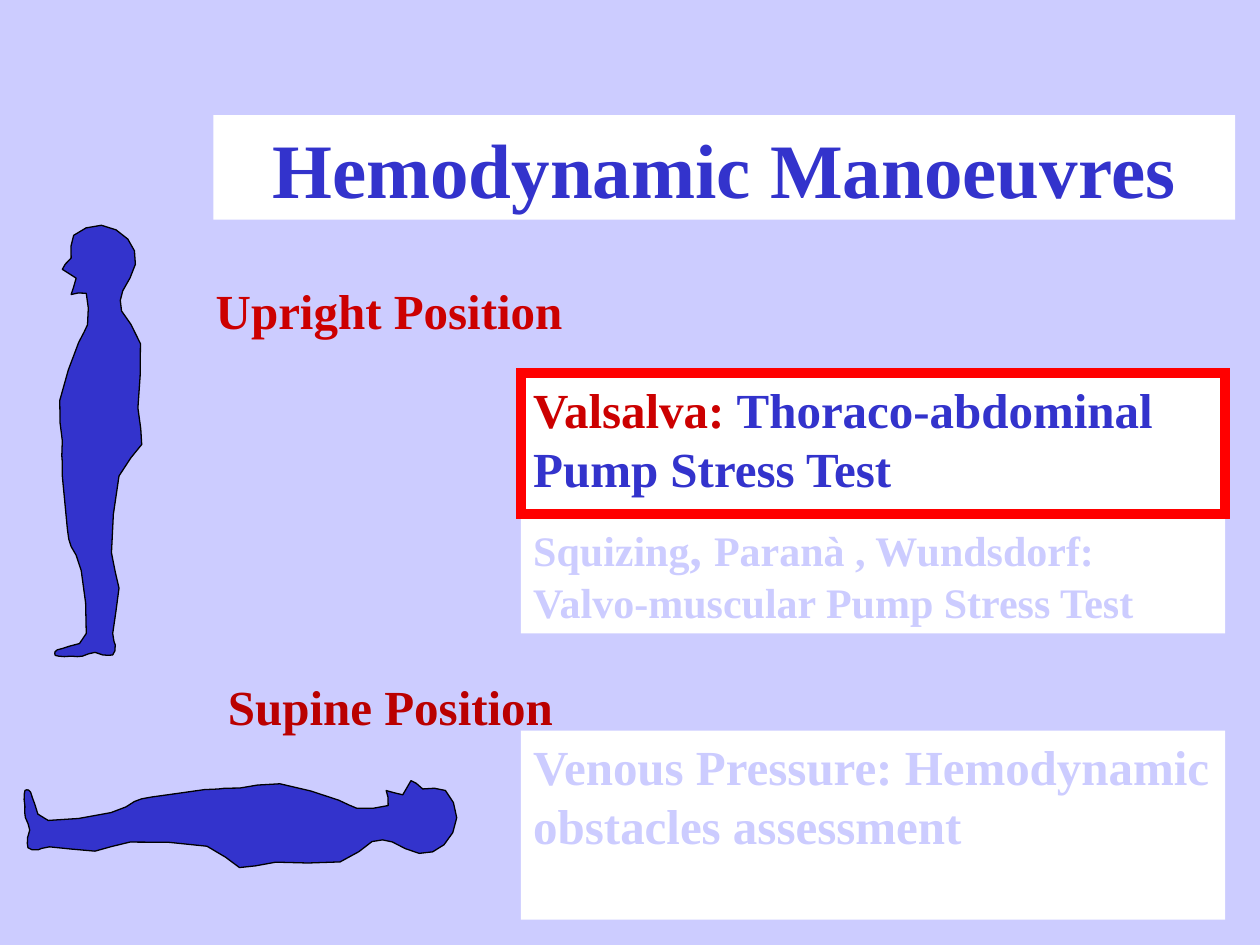
import pptx
import pptx.util
import pptx.dml.color
import pptx.enum.shapes
import pptx.enum.text
import pptx.oxml.ns
import lxml.etree

Cm, Pt = pptx.util.Cm, pptx.util.Pt
RGBColor = pptx.dml.color.RGBColor
PP_ALIGN = pptx.enum.text.PP_ALIGN

LAVENDER = RGBColor(0xCC, 0xCC, 0xFF)
WHITE = RGBColor(0xFF, 0xFF, 0xFF)
BLUE = RGBColor(0x33, 0x33, 0xCC)
RED = RGBColor(0xCC, 0x00, 0x00)
DARK_RED = RGBColor(0xBA, 0x00, 0x00)
BRIGHT_RED = RGBColor(0xFF, 0x00, 0x00)
BLACK = RGBColor(0x00, 0x00, 0x00)

FONT = "Times New Roman"
BOX_LEFT, BOX_WIDTH = 10.5, 14.2
LABEL_LEFT = 4.1

# Body outline in profile, in hundredths of an inch:
# each row is two control points and the end of a curve
BODY_START = (49, 350)
BODY_CURVES = [
    (49, 342, 45, 331, 47, 318), (49, 305, 58, 282, 62, 272),
    (65, 262, 68, 265, 69, 258), (70, 252, 70, 237, 68, 233),
    (66, 229, 57, 236, 56, 234), (55, 232, 61, 224, 60, 221),
    (59, 218, 50, 217, 49, 214), (48, 211, 54, 209, 56, 205),
    (57, 200, 54, 191, 58, 187), (62, 183, 73, 178, 80, 179),
    (87, 179, 97, 185, 101, 190), (106, 195, 108, 203, 107, 210),
    (107, 217, 99, 225, 97, 231), (95, 237, 94, 240, 96, 247),
    (98, 254, 109, 260, 111, 273), (113, 286, 109, 311, 109, 324),
    (109, 338, 114, 344, 112, 353), (109, 362, 98, 364, 94, 378),
    (90, 393, 88, 424, 88, 439), (88, 453, 94, 456, 94, 467),
    (94, 477, 89, 495, 89, 503), (89, 511, 91, 509, 91, 512),
    (91, 515, 91, 519, 89, 520), (88, 521, 84, 520, 81, 520),
    (79, 520, 77, 518, 75, 518), (72, 518, 68, 520, 65, 521),
    (62, 522, 60, 521, 56, 521), (53, 521, 48, 522, 46, 521),
    (43, 521, 43, 520, 43, 519), (43, 518, 43, 517, 45, 516),
    (47, 515, 51, 515, 55, 513), (59, 511, 67, 513, 68, 503),
    (70, 493, 66, 465, 64, 453), (62, 441, 58, 439, 56, 434),
    (54, 428, 54, 429, 53, 420), (52, 411, 50, 387, 49, 378),
    (49, 370, 49, 369, 49, 367), (49, 367, 48, 359, 49, 350),
]


def curve_points(start, curves, steps=2):
    """Sample a chain of cubic curves."""
    points = []
    x0, y0 = start
    for x1, y1, x2, y2, x3, y3 in curves:
        for i in range(1, steps + 1):
            t = i / steps
            u = 1 - t
            a, b, c, d = u**3, 3 * u * u * t, 3 * u * t * t, t**3
            points.append((a * x0 + b * x1 + c * x2 + d * x3,
                           a * y0 + b * y1 + c * y2 + d * y3))
        x0, y0 = x3, y3
    return points


def add_body(s, center_x, center_y, rotation=0):
    unit = Cm(2.54) // 100
    points = [(x * unit, y * unit) for x, y in curve_points(BODY_START, BODY_CURVES)]
    builder = s.shapes.build_freeform(*points[-1], scale=1.0)
    builder.add_line_segments(points[:-1], close=True)
    sp = builder.convert_to_shape()
    sp.left = Cm(center_x) - sp.width // 2
    sp.top = Cm(center_y) - sp.height // 2
    sp.rotation = rotation
    sp.shadow.inherit = False
    sp.fill.solid()
    sp.fill.fore_color.rgb = BLUE
    sp.line.color.rgb = BLACK
    sp.line.width = Pt(0.75)


def write(sp, runs, align=PP_ALIGN.LEFT):
    """Fill a shape with one bold paragraph of (text, size, colour) runs."""
    tf = sp.text_frame
    tf.word_wrap = True
    tf.auto_size = pptx.enum.text.MSO_AUTO_SIZE.NONE
    tf.vertical_anchor = pptx.enum.text.MSO_ANCHOR.TOP
    p = tf.paragraphs[0]
    p.alignment = align
    p.font.name = FONT
    p.font.bold = True
    for text, size, color in runs:
        r = p.add_run()
        r.text = text
        r.font.size = Pt(size)
        r.font.color.rgb = color


def add_title(s, text):
    sp = s.shapes.title
    sp.left, sp.top, sp.width, sp.height = Cm(4.3), Cm(2.32), Cm(20.6), Cm(2.11)
    sp.fill.solid()
    sp.fill.fore_color.rgb = WHITE
    write(sp, [(text, 44, BLUE)], PP_ALIGN.CENTER)


def add_label(s, top, width, text, color):
    sp = s.shapes.add_textbox(Cm(LABEL_LEFT), Cm(top), Cm(width), Cm(1.45))
    write(sp, [(text, 28, color)])


def add_box(s, top, height, runs, border=None):
    sp = s.shapes.add_shape(pptx.enum.shapes.MSO_SHAPE.RECTANGLE,
                            Cm(BOX_LEFT), Cm(top), Cm(BOX_WIDTH), Cm(height))
    sp.shadow.inherit = False
    sp.fill.solid()
    sp.fill.fore_color.rgb = WHITE
    if border is None:
        sp.line.fill.background()
    else:
        sp.line.color.rgb = border
        sp.line.width = Pt(6)
        # Square corners on the frame
        ln = sp.element.spPr.find(pptx.oxml.ns.qn("a:ln"))
        lxml.etree.SubElement(ln, pptx.oxml.ns.qn("a:miter"), lim="800000")
    write(sp, runs)


def main():
    prs = pptx.Presentation()
    prs.slide_width, prs.slide_height = Cm(25.4), Cm(19.05)
    s = prs.slides.add_slide(prs.slide_layouts[5])
    s.background.fill.solid()
    s.background.fill.fore_color.rgb = LAVENDER

    add_title(s, "Hemodynamic Manoeuvres")

    # Upright position, with the active test framed in red
    add_body(s, 1.98, 8.89)
    add_label(s, 5.54, 9.19, "Upright Position", RED)
    add_box(s, 10.31, 2.46, [
        ("Squizing", 24, LAVENDER),
        (", ", 28, LAVENDER),
        ("Paranà , Wundsdorf: Valvo-muscular Pump Stress Test", 24, LAVENDER),
    ])
    add_box(s, 7.52, 2.84, [
        ("Valsalva: ", 28, RED),
        ("Thoraco-abdominal Pump Stress Test", 28, BLUE),
    ], border=BRIGHT_RED)

    # Supine position
    add_label(s, 13.51, 8.61, " Supine Position", DARK_RED)
    add_box(s, 14.73, 3.81, [
        ("Venous Pressure: Hemodynamic obstacles assessment", 28, LAVENDER),
    ])
    add_body(s, 4.86, 16.61, rotation=87.5)

    prs.save("out.pptx")


if __name__ == "__main__":
    main()
